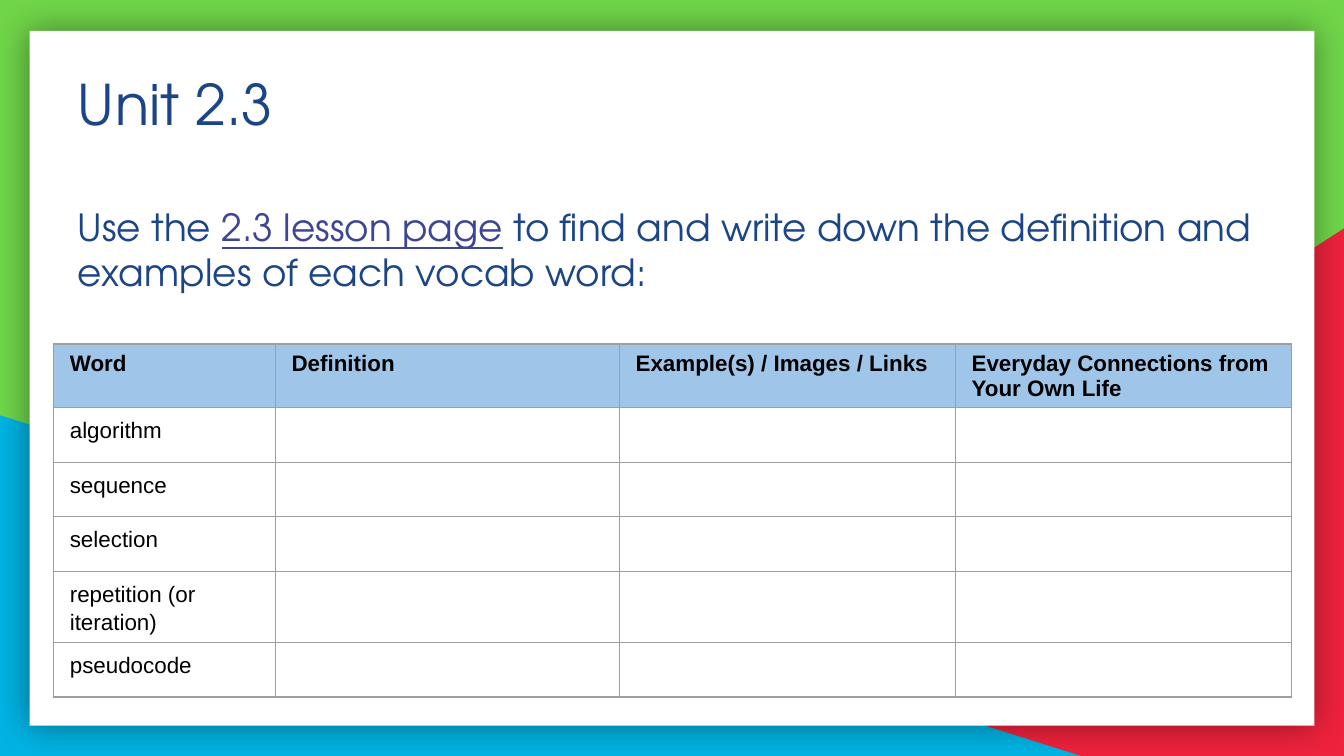
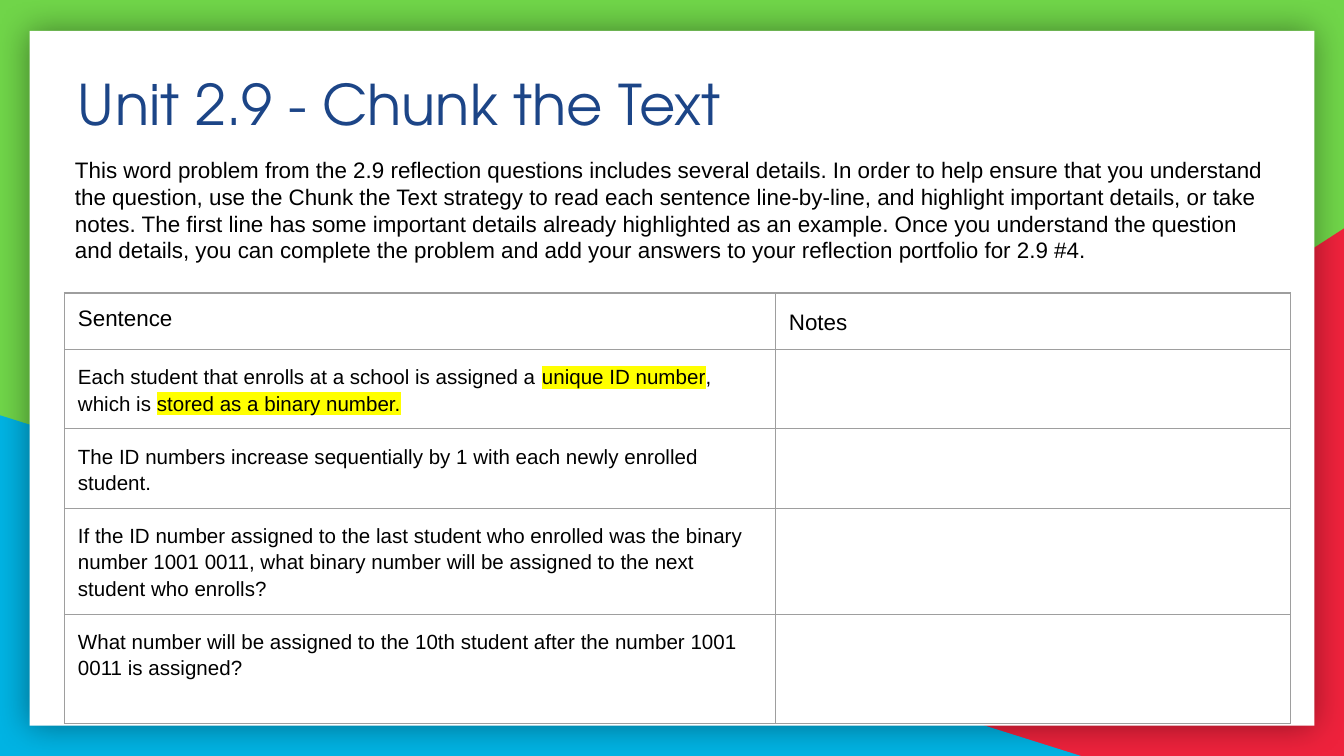
import lxml.etree
import pptx
import pptx.dml.color
import pptx.enum.shapes
import pptx.enum.text
import pptx.oxml
import pptx.oxml.ns
import pptx.util

Inches = pptx.util.Inches
Pt = pptx.util.Pt
qn = pptx.oxml.ns.qn
MSO_SHAPE = pptx.enum.shapes.MSO_SHAPE

TITLE_FONT = "TeX Gyre Adventor"
BODY_FONT = "Arial"
GREEN, RED, BLUE, WHITE = "70D549", "EE223C", "00B3E3", "FFFFFF"
NAVY, LINK, BLACK = "1C4587", "3D4594", "000000"
HEADER_FILL, BORDER, HIGHLIGHT = "9FC5E8", "9E9E9E", "FFFF00"

VOCABULARY_HEADER = ["Word", "Definition", "Example(s) / Images / Links",
                     "Everyday Connections from Your Own Life"]
VOCABULARY = ["algorithm", "sequence", "selection",
              "repetition (or iteration)", "pseudocode"]
INSTRUCTIONS = (
    "This word problem from the 2.9 reflection questions includes several details. "
    "In order to help ensure that you understand the question, use the Chunk the Text "
    "strategy to read each sentence line-by-line, and highlight important details, or "
    "take notes. The first line has some important details already highlighted as an "
    "example. Once you understand the question and details, you can complete the problem "
    "and add your answers to your reflection portfolio for 2.9 #4.")
FIRST_SENTENCE = [
    ("Each student that enrolls at a school is assigned a ", {}),
    ("unique ID number", {"highlight": HIGHLIGHT}),
    (", which is ", {}),
    ("stored as a binary number.", {"highlight": HIGHLIGHT}),
]
OTHER_SENTENCES = [
    "The ID numbers increase sequentially by 1 with each newly enrolled student.",
    "If the ID number assigned to the last student who enrolled was the binary number "
    "1001 0011, what binary number will be assigned to the next student who enrolls?",
    "What number will be assigned to the 10th student after the number 1001 0011 "
    "is assigned?",
]


def rgb(value):
    return pptx.dml.color.RGBColor.from_string(value)


def add_run(paragraph, text, font, size, color, bold=False, underline=False,
            highlight=None):
    run = paragraph.add_run()
    run.text = text
    run.font.name = font
    run.font.size = Pt(size)
    run.font.bold = bold
    run.font.underline = underline
    run.font.color.rgb = rgb(color)
    if highlight:
        properties = run.font._element
        marker = pptx.oxml.parse_xml(
            f'<a:highlight {pptx.oxml.ns.nsdecls("a")}>'
            f'<a:srgbClr val="{highlight}"/></a:highlight>')
        properties.find(qn("a:solidFill")).addnext(marker)


def set_margins(target, horizontal, vertical):
    """Set the insets of a cell or a text frame."""
    target.margin_left = target.margin_right = Inches(horizontal)
    target.margin_top = target.margin_bottom = Inches(vertical)


def place(shape, left, top, width, height):
    shape.left, shape.top = Inches(left), Inches(top)
    shape.width, shape.height = Inches(width), Inches(height)


def add_panel(slide, preset, left, top, width, height, color):
    shape = slide.shapes.add_shape(
        preset, Inches(left), Inches(top), Inches(width), Inches(height))
    shape.shadow.inherit = False
    shape.fill.solid()
    shape.fill.fore_color.rgb = rgb(color)
    shape.line.fill.background()
    return shape


def add_glow_shadow(shape):
    effects = shape.element.spPr.find(qn("a:effectLst"))
    shadow = lxml.etree.SubElement(
        effects, qn("a:outerShdw"), blurRad=str(Pt(18)), dist="0", dir="0",
        algn="ctr", rotWithShape="0")
    color = lxml.etree.SubElement(shadow, qn("a:srgbClr"), val=BLACK)
    lxml.etree.SubElement(color, qn("a:alpha"), val="40000")


def decorate_master(master, slide):
    """Draw the shared backdrop on a slide, then move it to the master."""
    master.background.fill.solid()
    master.background.fill.fore_color.rgb = rgb(GREEN)
    triangle = MSO_SHAPE.RIGHT_TRIANGLE
    right_corner = add_panel(slide, triangle, 3.92, 1.7, 6.08, 3.93, RED)
    right_corner.element.spPr.find(qn("a:xfrm")).set("flipH", "1")
    left_corner = add_panel(slide, triangle, 0, 3.09, 8.06, 2.54, BLUE)
    card = add_panel(slide, MSO_SHAPE.RECTANGLE, 0.22, 0.23, 9.56, 5.17, WHITE)
    add_glow_shadow(card)
    first_placeholder = master.shapes[0].element
    for shape in (right_corner, left_corner, card):
        first_placeholder.addprevious(shape.element)


def set_title(slide, text):
    title = slide.shapes.title
    place(title, 0.48, 0.42, 9.12, 1.04)
    frame = title.text_frame
    frame.word_wrap = True
    frame.auto_size = pptx.enum.text.MSO_AUTO_SIZE.NONE
    frame.vertical_anchor = pptx.enum.text.MSO_ANCHOR.TOP
    set_margins(frame, 0.1, 0.1)
    paragraph = frame.paragraphs[0]
    paragraph.alignment = pptx.enum.text.PP_ALIGN.LEFT
    add_run(paragraph, text, TITLE_FONT, 30, NAVY)
    return frame


def add_task(title_frame):
    paragraph = title_frame.add_paragraph()
    paragraph.alignment = pptx.enum.text.PP_ALIGN.LEFT
    paragraph.space_before = Pt(36)
    add_run(paragraph, "Use the ", TITLE_FONT, 20, NAVY)
    add_run(paragraph, "2.3 lesson page", TITLE_FONT, 20, LINK, underline=True)
    add_run(paragraph, " to find and write down the definition and examples "
            "of each vocab word:", TITLE_FONT, 20, NAVY)


def add_text(slide, text, left, top, width, height):
    frame = slide.shapes.add_textbox(
        Inches(left), Inches(top), Inches(width), Inches(height)).text_frame
    frame.word_wrap = True
    frame.auto_size = pptx.enum.text.MSO_AUTO_SIZE.SHAPE_TO_FIT_TEXT
    set_margins(frame, 0.1, 0.1)
    add_run(frame.paragraphs[0], text, BODY_FONT, 12, BLACK)


def set_borders(cell):
    properties = cell._tc.get_or_add_tcPr()
    for side in ("lnL", "lnR", "lnT", "lnB"):
        line = lxml.etree.SubElement(properties, qn(f"a:{side}"), w=str(Pt(0.75)))
        fill = lxml.etree.SubElement(line, qn("a:solidFill"))
        lxml.etree.SubElement(fill, qn("a:srgbClr"), val=BORDER)


def add_table(slide, left, top, widths, heights, margins, header_fill=None):
    table = slide.shapes.add_table(
        len(heights), len(widths), Inches(left), Inches(top),
        Inches(sum(widths)), Inches(sum(heights))).table
    table.first_row = table.horz_banding = False
    for column, width in zip(table.columns, widths):
        column.width = Inches(width)
    for index, (row, height) in enumerate(zip(table.rows, heights)):
        row.height = Inches(height)
        for cell in row.cells:
            set_margins(cell, *margins)
            set_borders(cell)
            if header_fill and index == 0:
                cell.fill.solid()
                cell.fill.fore_color.rgb = rgb(header_fill)
            else:
                cell.fill.background()
    return table


def fill_cell(cell, runs, size=12, spacing=None, bold=False):
    """Write a string, or a list of (text, run options), into a cell."""
    if isinstance(runs, str):
        runs = [(runs, {})]
    paragraph = cell.text_frame.paragraphs[0]
    paragraph.line_spacing = spacing
    for text, options in runs:
        settings = {"size": size, "bold": bold, **options}
        add_run(paragraph, text, BODY_FONT, color=BLACK, **settings)


def build_vocabulary_slide(slide):
    add_task(set_title(slide, "Unit 2.3"))
    table = add_table(slide, 0.4, 2.56, [1.65, 2.56, 2.5, 2.5],
                      [0.47, 0.38, 0.38, 0.38, 0.53, 0.38], (0.12, 0.05), HEADER_FILL)
    for column, heading in enumerate(VOCABULARY_HEADER):
        fill_cell(table.cell(0, column), heading, bold=True)
    for row, word in enumerate(VOCABULARY, start=1):
        fill_cell(table.cell(row, 0), word, spacing=1.15)


def build_chunking_slide(slide):
    set_title(slide, "Unit 2.9 - Chunk the Text")
    table = add_table(slide, 0.48, 2.18, [5.29, 3.83],
                      [0.42, 0.59, 0.59, 0.79, 0.81], (0.1, 0.1))
    fill_cell(table.cell(0, 0), "Sentence")
    fill_cell(table.cell(0, 1), [("Notes", {}), (" ", {"size": 14})])
    for row, sentence in enumerate([FIRST_SENTENCE, *OTHER_SENTENCES], start=1):
        fill_cell(table.cell(row, 0), sentence, size=11, spacing=1.15)
    add_text(slide, INSTRUCTIONS, 0.46, 1.06, 9.06, 1.01)


def main():
    presentation = pptx.Presentation()
    presentation.slide_width = Inches(10)
    presentation.slide_height = Inches(5.625)
    title_only = presentation.slide_layouts.get_by_name("Title Only")
    vocabulary_slide = presentation.slides.add_slide(title_only)
    chunking_slide = presentation.slides.add_slide(title_only)
    decorate_master(presentation.slide_master, vocabulary_slide)
    build_vocabulary_slide(vocabulary_slide)
    build_chunking_slide(chunking_slide)
    presentation.save("out.pptx")


if __name__ == "__main__":
    main()
